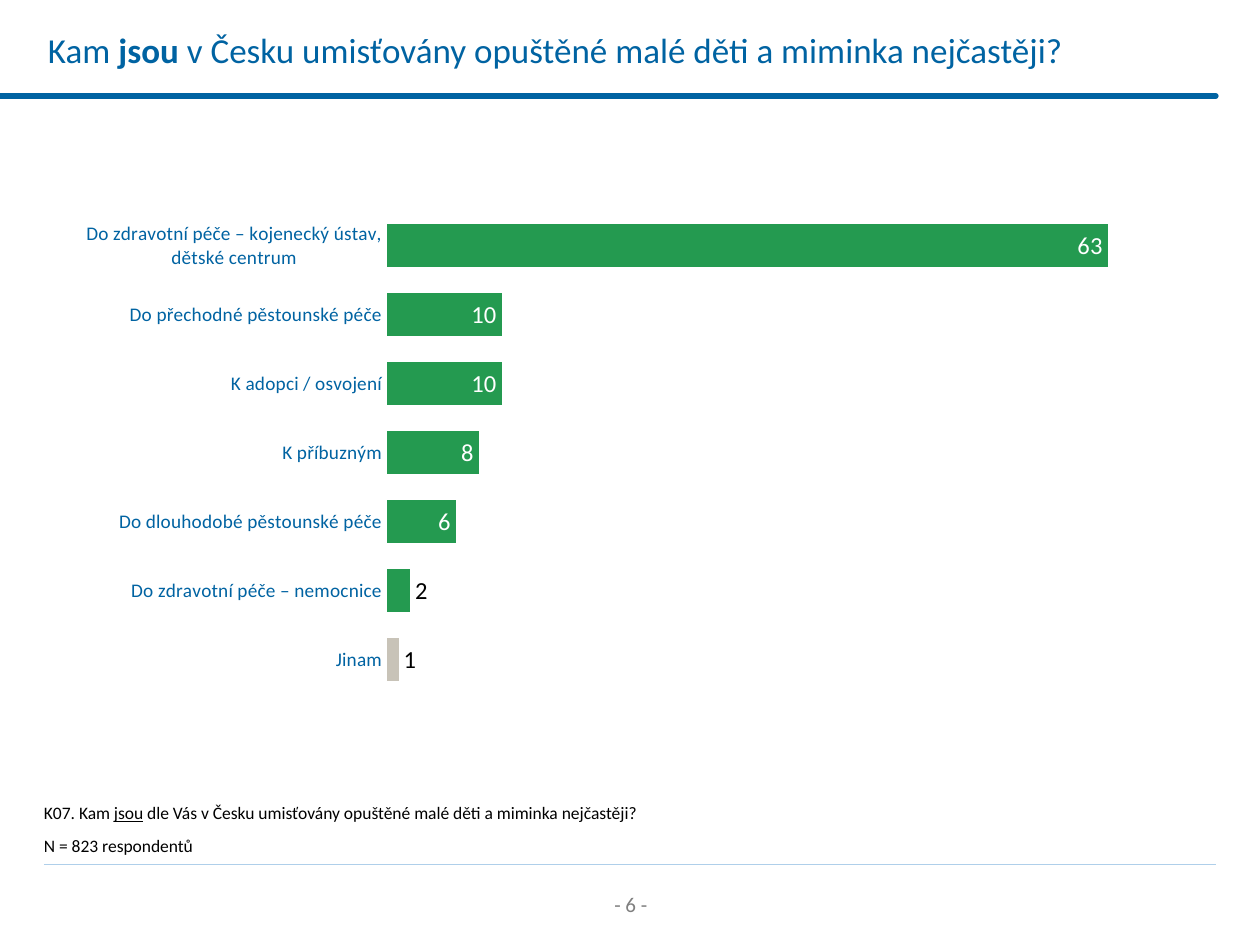
from lxml.etree import SubElement
from pptx import Presentation
from pptx.chart.data import CategoryChartData
from pptx.dml.color import RGBColor
from pptx.enum.chart import XL_CHART_TYPE, XL_LABEL_POSITION, XL_TICK_LABEL_POSITION, XL_TICK_MARK
from pptx.enum.shapes import MSO_CONNECTOR
from pptx.enum.text import MSO_ANCHOR, PP_ALIGN
from pptx.oxml import parse_xml
from pptx.oxml.ns import nsdecls, qn
from pptx.util import Emu, Pt

SCALE = 914400 / 126  # EMU per px
FONT = "Calibri"
COLORS = {"blue": "0063A2", "pale": "AFCFEA", "gray": "808080", "black": "000000",
          "white": "FFFFFF", "green": "249A50", "sand": "C8C3B8"}

# Runs are (text, style); style is "", "bold" or "underline"
TITLE = [("Kam ", ""), ("jsou", "bold"),
         (" v Česku umisťovány opuštěné malé děti a miminka nejčastěji?", "")]
QUESTION = [("K07. Kam ", ""), ("jsou", "underline"),
            (" dle Vás v Česku umisťovány opuštěné malé děti a miminka nejčastěji?", "")]
SAMPLE = [("N = 823 respondentů", "")]
PAGE_NUMBER = [("- 6 -", "")]

ANSWERS = [
    ("Do zdravotní péče – kojenecký ústav, dětské centrum", 63),
    ("Do přechodné pěstounské péče", 10),
    ("K adopci / osvojení", 10),
    ("K příbuzným", 8),
    ("Do dlouhodobé pěstounské péče", 6),
    ("Do zdravotní péče – nemocnice", 2),
    ("Jinam", 1),
]
OTHER = len(ANSWERS) - 1
SMALLEST_INSIDE_LABEL = 5
PLOT = {"x": 0.3, "y": 0.014, "w": 0.7, "h": 0.929}


def px(value):
    return Emu(round(value * SCALE))


def color(name):
    return RGBColor.from_string(COLORS[name])


def style_font(font, size, color_name):
    font.name, font.size = FONT, Pt(size)
    font.color.rgb = color(color_name)


def add_text(page, place, runs, size, color_name, left_inset=13,
             align=PP_ALIGN.LEFT, anchor=MSO_ANCHOR.TOP):
    box = page.shapes.add_textbox(*map(px, place))
    frame = box.text_frame
    frame.word_wrap = True
    frame.margin_left = px(left_inset)
    frame.vertical_anchor = anchor
    para = frame.paragraphs[0]
    para.alignment = align
    style_font(para.font, size, color_name)
    for text, style in runs:
        span = para.add_run()
        span.text = text
        if style:
            setattr(span.font, style, True)


def add_rule(page, left, right, y, color_name, width, cap="flat"):
    rule = page.shapes.add_connector(MSO_CONNECTOR.STRAIGHT, px(left), px(y), px(right), px(y))
    rule.line.color.rgb = color(color_name)
    rule.line.width = Pt(width)
    rule.line._get_or_add_ln().set("cap", cap)
    SubElement(rule._element.spPr, qn("a:effectLst"))


def set_plot_layout(chart):
    """Fix the inner plot area as fractions of the chart."""
    parts = "".join(f'<c:{key}Mode val="edge"/>' for key in "xy")
    parts += "".join(f'<c:{key} val="{value}"/>' for key, value in PLOT.items())
    layout = parse_xml(f'<c:layout {nsdecls("c")}><c:manualLayout>'
                       f'<c:layoutTarget val="inner"/>{parts}</c:manualLayout></c:layout>')
    area = chart._chartSpace.chart.plotArea
    for old in area.findall(qn("c:layout")):
        area.remove(old)
    area.insert(0, layout)


def add_answers_chart(page):
    data = CategoryChartData(number_format="#,##0")
    data.categories = [name for name, _ in ANSWERS]
    data.add_series("Series 1", [value for _, value in ANSWERS])
    chart = page.shapes.add_chart(XL_CHART_TYPE.BAR_CLUSTERED, px(44), px(204),
                                  px(1144), px(520), data).chart
    style_font(chart.font, 18, "black")
    chart.has_legend = chart.has_title = False
    set_plot_layout(chart)

    names = chart.category_axis
    names.reverse_order = True
    names.major_tick_mark = XL_TICK_MARK.NONE
    names.format.line.fill.background()
    style_font(names.tick_labels.font, 11, "blue")

    scale = chart.value_axis
    scale.minimum_scale, scale.maximum_scale = 0, 70
    scale.has_major_gridlines = False
    scale.major_tick_mark = XL_TICK_MARK.NONE
    scale.tick_label_position = XL_TICK_LABEL_POSITION.NONE
    scale.format.line.fill.background()

    plot = chart.plots[0]
    plot.gap_width = 60
    plot.vary_by_categories = False
    bars = plot.series[0]
    bars.format.fill.solid()
    bars.format.fill.fore_color.rgb = color("green")
    other_fill = bars.points[OTHER].format.fill
    other_fill.solid()
    other_fill.fore_color.rgb = color("sand")

    labels = bars.data_labels
    labels.show_value = True
    labels.number_format, labels.number_format_is_linked = "#,##0", False
    labels.position = XL_LABEL_POSITION.INSIDE_END
    style_font(labels.font, 14, "white")
    for index, (_, value) in enumerate(ANSWERS):
        if value < SMALLEST_INSIDE_LABEL:
            label = bars.points[index].data_label
            style_font(label.font, 14, "black")
            label.position = XL_LABEL_POSITION.OUTSIDE_END


def main():
    deck = Presentation()
    deck.slide_width, deck.slide_height = px(1260), px(945)
    page = deck.slides.add_slide(deck.slide_layouts[6])
    add_rule(page, 44, 1216, 864, "pale", 0.5)
    add_text(page, (551, 885, 159, 38), PAGE_NUMBER, 12, "gray", align=PP_ALIGN.CENTER)
    add_rule(page, 0, 1216, 96, "blue", 3, cap="rnd")
    add_text(page, (35, 0, 1124, 100), TITLE, 20, "blue", anchor=MSO_ANCHOR.MIDDLE)
    add_text(page, (44, 796, 1173, 34), QUESTION, 10, "black", left_inset=0)
    add_text(page, (44, 829, 856, 34), SAMPLE, 10, "black", left_inset=0)
    add_answers_chart(page)
    deck.save("out.pptx")


if __name__ == "__main__":
    main()
